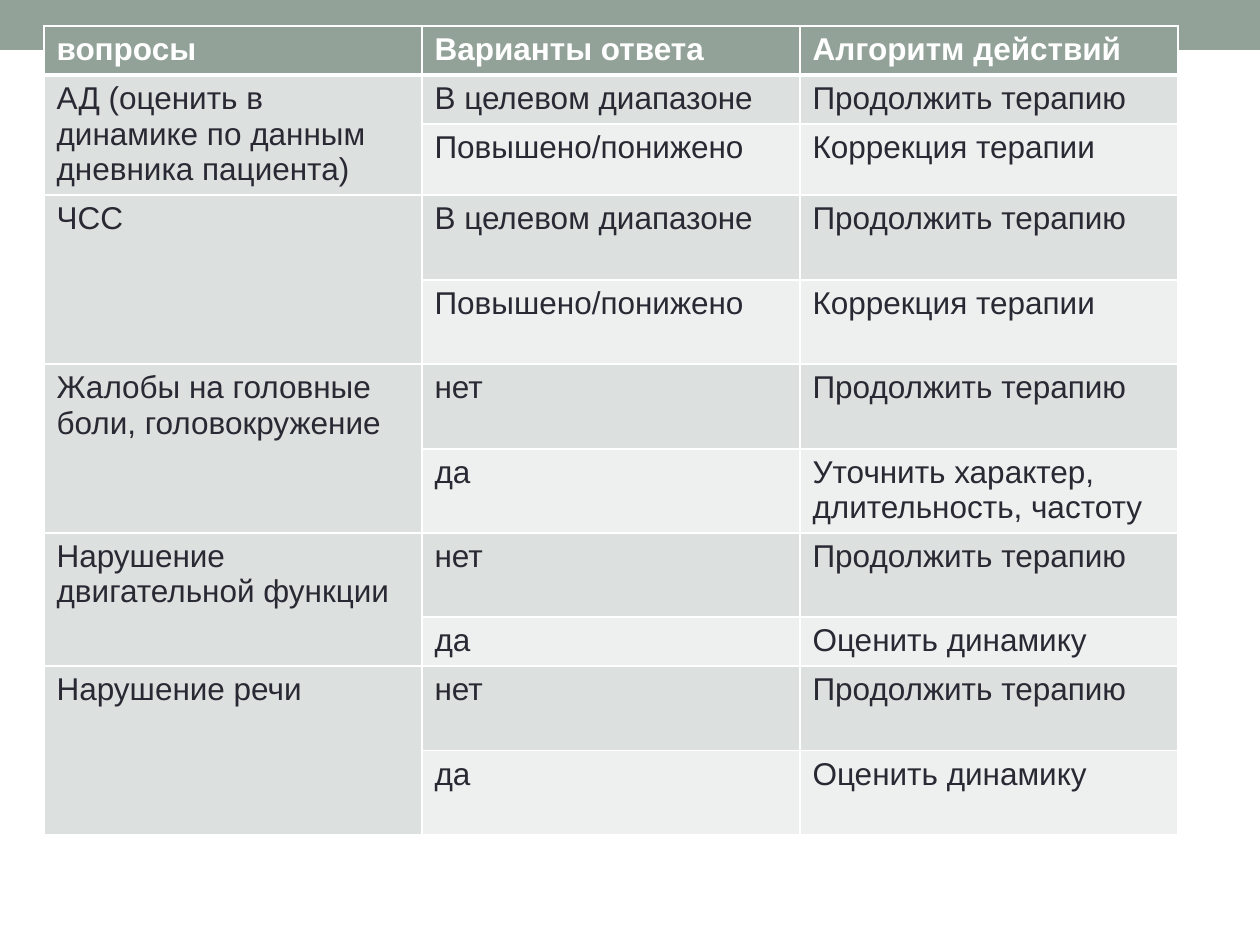
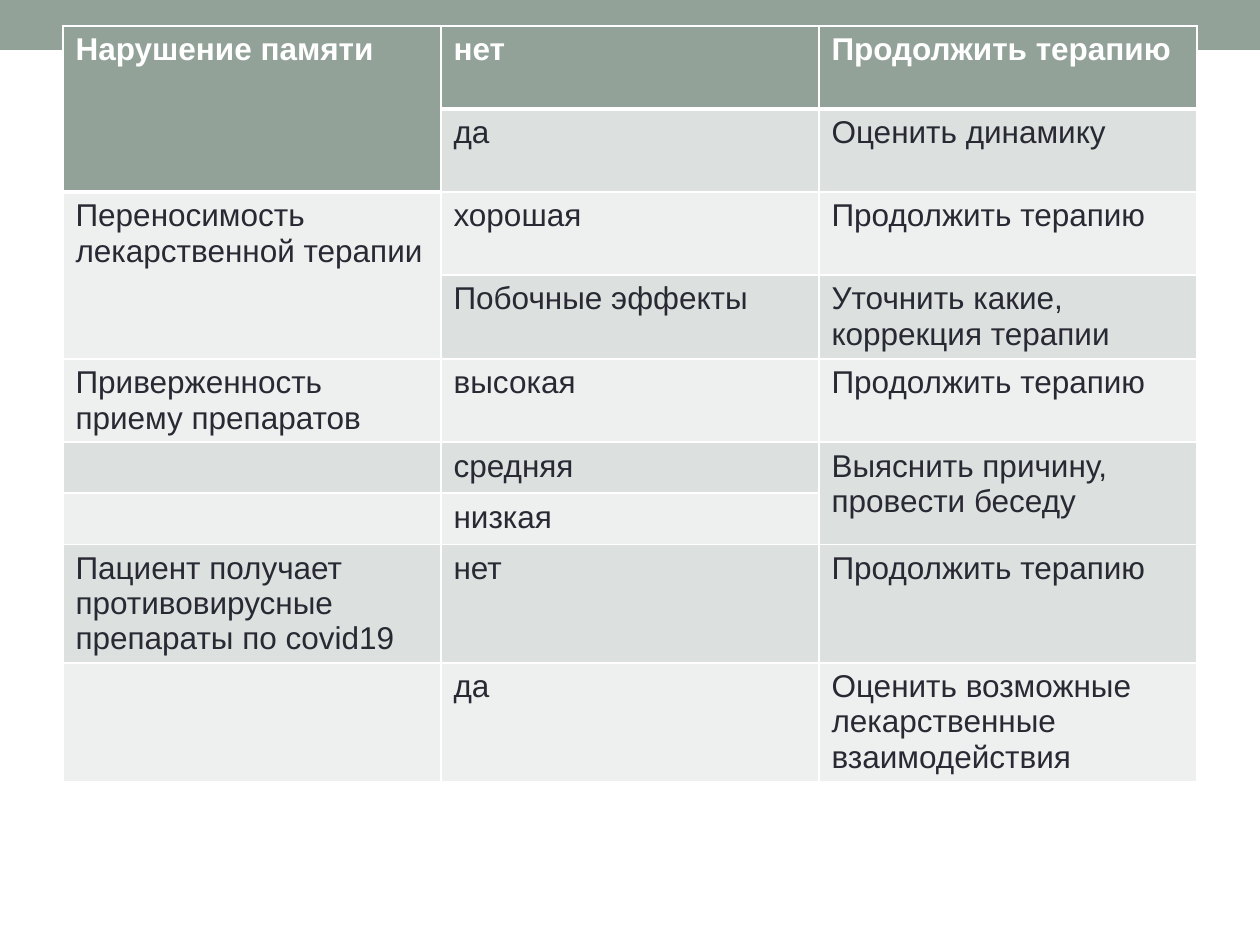
from lxml import etree
from pptx import Presentation
from pptx.dml.color import RGBColor
from pptx.enum.shapes import MSO_SHAPE
from pptx.oxml.ns import qn
from pptx.util import Pt

RECT = MSO_SHAPE.RECTANGLE
PX = 914400 / 126
WIDE, HIGH = 1260, 945
TOP, COL = 26, 378
GREEN, WHITE, INK = "93A299", "FFFFFF", "292934"
BANDS = ("EEF0EF", "DCE0DE")
FONT, SIZE = "Arial", 18
THIN, THICK = 1, 3

GO, FIX, WATCH = "Продолжить терапию", "Коррекция терапии", "Оценить динамику"
GOAL, OFF = "В целевом диапазоне", "Повышено/понижено"

# None marks a cell that is joined to the one above it.
SIGNS = [
    (49, "вопросы", "Варианты ответа", "Алгоритм действий"),
    (49, "АД (оценить в динамике по данным дневника пациента)", GOAL, GO),
    (71, None, OFF, FIX),
    (85, "ЧСС", GOAL, GO),
    (84, None, OFF, FIX),
    (85, "Жалобы на головные боли, головокружение", "нет", GO),
    (84, None, "да", "Уточнить характер, длительность, частоту"),
    (84, "Нарушение двигательной функции", "нет", GO),
    (49, None, "да", WATCH),
    (85, "Нарушение речи", "нет", GO),
    (84, None, "да", WATCH),
]
DRUGS = [
    (83, "Нарушение памяти", "нет", GO),
    (83, None, "да", WATCH),
    (83, "Переносимость лекарственной терапии", "хорошая", GO),
    (84, None, "Побочные эффекты", "Уточнить какие, коррекция терапии"),
    (83, "Приверженность приему препаратов", "высокая", GO),
    (51, "", "средняя", "Выяснить причину, провести беседу"),
    (51, "", "низкая", None),
    (118, "Пациент получает противовирусные препараты по covid19", "нет", GO),
    (118, "", "да", "Оценить возможные лекарственные взаимодействия"),
]


def emu(px):
    return round(px * PX)


def rgb(code):
    return RGBColor.from_string(code)


def add_band(slide):
    band = slide.shapes.add_shape(RECT, 0, 0, emu(WIDE), emu(50))
    band.shadow.inherit = False
    band.fill.solid()
    band.fill.fore_color.rgb = rgb(GREEN)
    band.line.fill.background()


def set_edges(cell, above, below):
    """Draw white borders; above and below are widths in points."""
    props = cell._tc.get_or_add_tcPr()
    for side, width in (("L", THIN), ("R", THIN), ("T", above), ("B", below)):
        line = etree.SubElement(props, qn(f"a:ln{side}"), w=str(Pt(width)))
        fill = etree.SubElement(line, qn("a:solidFill"))
        etree.SubElement(fill, qn("a:srgbClr"), val=WHITE)


def set_text(cell, text, head):
    cell.text_frame.text = text
    for run in cell.text_frame.paragraphs[0].runs:
        font = run.font
        font.name, font.size, font.bold = FONT, Pt(SIZE), head
        font.color.rgb = rgb(WHITE if head else INK)


def add_grid(slide, left, rows):
    high = sum(row[0] for row in rows)
    frame = slide.shapes.add_table(
        len(rows), 3, emu(left), emu(TOP), emu(3 * COL), emu(high))
    table = frame.table
    table.first_row = table.horz_banding = False
    for col in table.columns:
        col.width = emu(COL)
    for row, data in zip(table.rows, rows):
        row.height = emu(data[0])
    for c in range(3):
        fill_col(table, c, [row[c + 1] for row in rows])


def fill_col(table, c, texts):
    start = 0
    for r, text in enumerate(texts):
        if text is not None:
            start = r
        cell = table.cell(r, c)
        head = start == 0
        past = r > 0 and not head and start == r and not any(texts[1:r])
        under = past and all(t is None for t in texts[1:r])
        set_edges(cell, THICK if under else THIN, THICK if head else THIN)
        cell.fill.solid()
        cell.fill.fore_color.rgb = rgb(GREEN if head else BANDS[start % 2])
        if text is None:
            table.cell(start, c).merge(cell)
        else:
            set_text(cell, text, head)


def main():
    deck = Presentation()
    deck.slide_width, deck.slide_height = emu(WIDE), emu(HIGH)
    blank = deck.slide_layouts[6]
    for left, rows in ((44, SIGNS), (63, DRUGS)):
        slide = deck.slides.add_slide(blank)
        add_band(slide)
        add_grid(slide, left, rows)
    deck.save("out.pptx")


if __name__ == "__main__":
    main()
